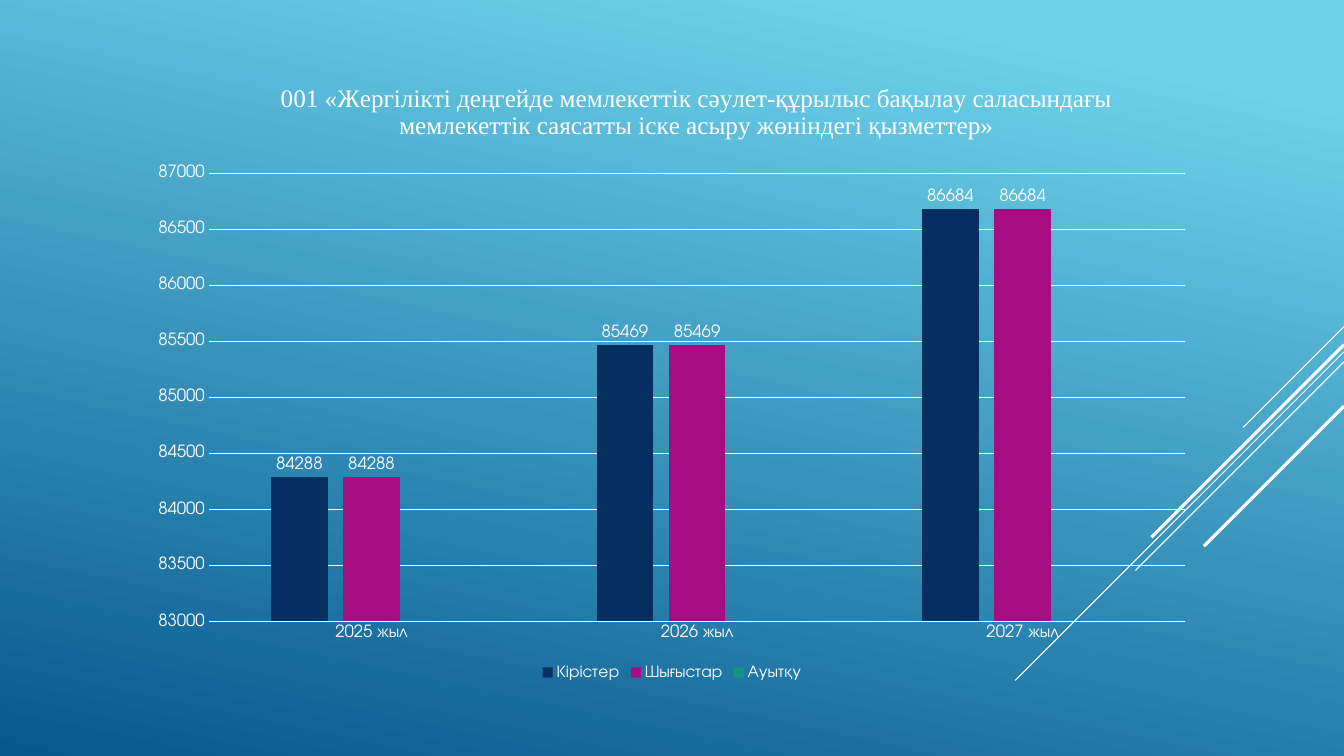
from pptx import Presentation, util as u
from pptx.chart.data import CategoryChartData
from pptx.dml.color import RGBColor
from pptx.enum import chart as ch, shapes
from pptx.oxml import parse_xml
from pptx.oxml.ns import nsdecls, qn

HUES = dict(sky="6ED2EB", sea="06588E", white="FFFFFF",
            navy="052F61", plum="A50E82", teal="14967C")
WIDE, HIGH = 13.33, 7.5
FACE = "TeX Gyre Adventor"
TITLE = ("001 «Жергілікті деңгейде мемлекеттік сәулет-құрылыс бақылау "
         "саласындағы мемлекеттік саясатты іске асыру жөніндегі қызметтер»")
YEARS = ["2025 жыл", "2026 жыл", "2027 жыл"]
SUMS = [84288, 85469, 86684]
SERIES = [("Кірістер", SUMS, "navy"), ("Шығыстар", SUMS, "plum"),
          ("Ауытқу", [None] * 3, "teal")]
RAYS = [(3.24, 1, 0.75), (3.49, 3.26, 0.75), (3.59, 2.07, 0.75),
        (3.42, 1.91, 2.25), (4.03, 1.39, 2.25)]


def hue(name):
    return RGBColor.from_string(HUES[name])


def apply(item, **vals):
    for key, val in vals.items():
        setattr(item, key, val)


def style(font, size, face=FACE):
    apply(font, size=u.Pt(size), name=face, bold=False)
    font.color.rgb = hue("white")


def stroke(line, width=0.75):
    line.color.rgb = hue("white")
    line.width = u.Pt(width)


def place(node, index, **vals):
    for old in node.findall(qn("c:layout")):
        node.remove(old)
    tags = "".join(f'<c:{key} val="{val}"/>' for key, val in vals.items())
    node.insert(index, parse_xml(
        f'<c:layout {nsdecls("c")}><c:manualLayout>{tags}'
        '</c:manualLayout></c:layout>'))


def backdrop(slide):
    fill = slide.background.fill
    fill.gradient()
    fill.gradient_angle = 258
    for stop, name, spot in zip(fill.gradient_stops, ("sky", "sea"), (0.1, 1)):
        stop.color.rgb = hue(name)
        stop.position = spot


def rays(slide, right):
    for top, run, width in RAYS:
        ends = [u.Inches(n) for n in (right, top, right - run, top + run)]
        ray = slide.shapes.add_connector(shapes.MSO_CONNECTOR.STRAIGHT, *ends)
        stroke(ray.line, width)
        ray._element.spPr.append(parse_xml(f'<a:effectLst {nsdecls("a")}/>'))


def heading(chart):
    chart.has_title = True
    title = chart.chart_title
    title.include_in_layout = False
    frame = title.text_frame
    frame.text = TITLE
    style(frame.paragraphs[0].runs[0].font, 18, "Times New Roman")
    place(title._element, 1, xMode="edge", yMode="edge", x=0.13, y=0.02)


def axes(chart):
    for axis in (chart.category_axis, chart.value_axis):
        apply(axis, major_tick_mark=ch.XL_TICK_MARK.NONE,
              minor_tick_mark=ch.XL_TICK_MARK.NONE)
        style(axis.tick_labels.font, 12)
    stroke(chart.category_axis.format.line)
    scale = chart.value_axis
    apply(scale, minimum_scale=83000, maximum_scale=87000,
          major_unit=500, has_major_gridlines=True)
    stroke(scale.major_gridlines.format.line)
    scale.format.line.fill.background()


def bars(chart):
    plot = chart.plots[0]
    apply(plot, gap_width=219, overlap=-27, vary_by_categories=False)
    for series, (_, _, name) in zip(plot.series, SERIES):
        series.format.fill.solid()
        series.format.fill.fore_color.rgb = hue(name)
        tags = series.data_labels
        apply(tags, show_value=True,
              position=ch.XL_LABEL_POSITION.OUTSIDE_END)
        style(tags.font, 12)


def budget(slide, box):
    data = CategoryChartData()
    data.categories = YEARS
    for name, sums, _ in SERIES:
        data.add_series(name, sums)
    chart = slide.shapes.add_chart(
        ch.XL_CHART_TYPE.COLUMN_CLUSTERED,
        *[u.Inches(n) for n in box], data).chart
    style(chart.font, 10)
    heading(chart)
    axes(chart)
    bars(chart)
    chart.has_legend = True
    apply(chart.legend, position=ch.XL_LEGEND_POSITION.BOTTOM,
          include_in_layout=False)
    style(chart.legend.font, 12)
    area = chart._chartSpace.chart.plotArea
    place(area, 0, layoutTarget="inner", xMode="edge", yMode="edge",
          x=0.067, y=0.174, w=0.913, h=0.724)


def main():
    deck = Presentation()
    apply(deck, slide_width=u.Inches(WIDE), slide_height=u.Inches(HIGH))
    slide = deck.slides.add_slide(deck.slide_layouts[6])
    backdrop(slide)
    rays(slide, WIDE)
    budget(slide, (1.36, 0.65, 10.61, 6.14))
    deck.save("out.pptx")


if __name__ == "__main__":
    main()
